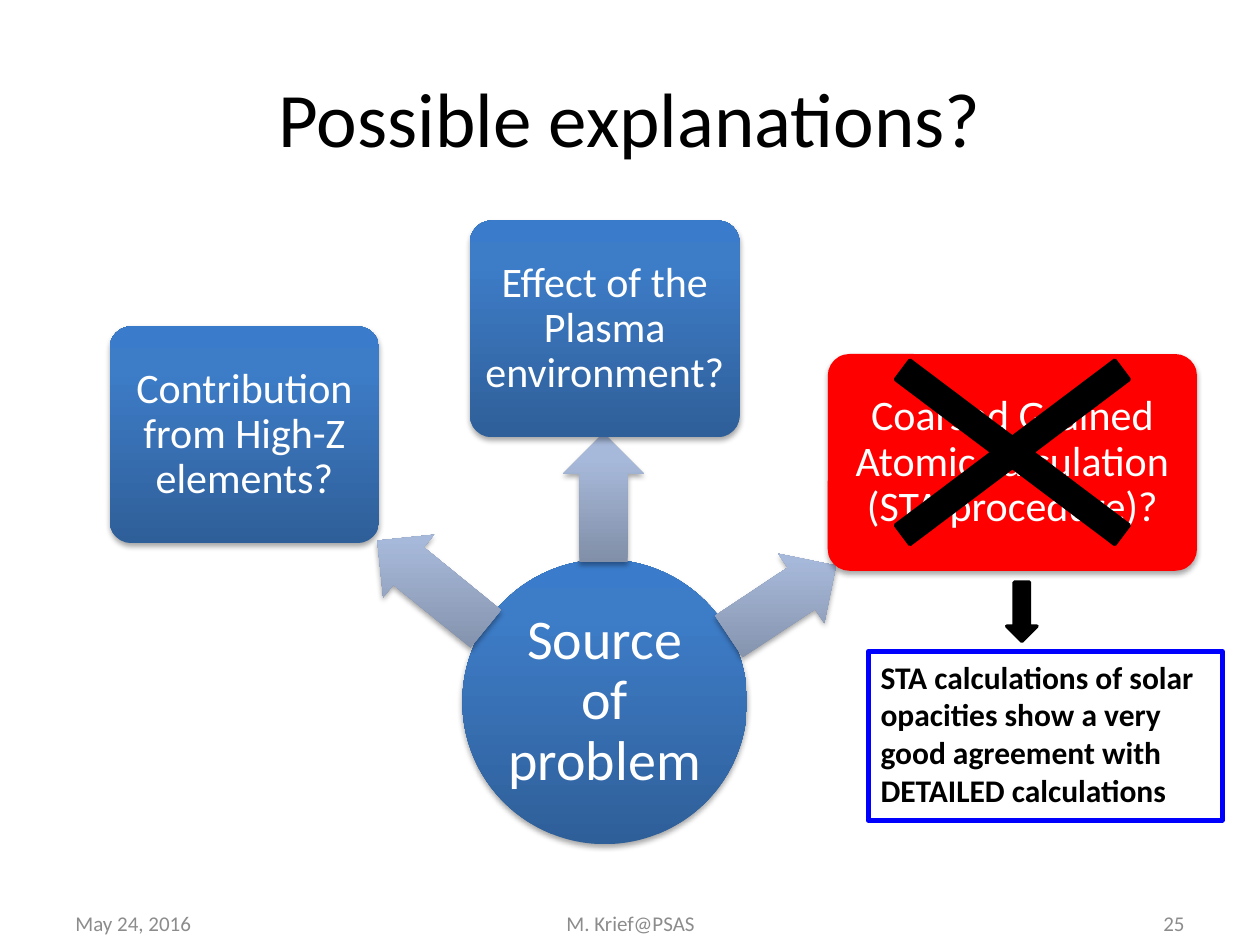
"""Build the slide that weighs three possible explanations of a problem."""
from lxml.etree import SubElement
from pptx import Presentation
from pptx.dml.color import RGBColor
from pptx.enum.shapes import MSO_SHAPE as Shape
from pptx.enum.text import MSO_ANCHOR as Anchor, PP_ALIGN as Align
from pptx.oxml import parse_xml
from pptx.oxml.ns import nsdecls, qn
from pptx.util import Inches, Pt

BLACK = RGBColor(0x00, 0x00, 0x00)
WHITE = RGBColor(0xFF, 0xFF, 0xFF)
GRAY = RGBColor(0x8C, 0x8C, 0x8C)
RED = RGBColor(0xFF, 0x00, 0x00)
BLUE = RGBColor(0x00, 0x00, 0xFF)
BLUE_STOPS = [RGBColor(0x2F, 0x5F, 0x99), RGBColor(0x3D, 0x7C, 0xC7), RGBColor(0x3A, 0x7C, 0xCB)]
ARROW_STOPS = [RGBColor(0x81, 0x8F, 0xA8), RGBColor(0xA7, 0xB9, 0xDA), RGBColor(0xA7, 0xBA, 0xDC)]

presentation = Presentation()
presentation.slide_width = Inches(10)
presentation.slide_height = Inches(7.5)
cell = presentation.slide_width / 100
slide = presentation.slides.add_slide(presentation.slide_layouts[5])


def write(shape, text, size, color, align, anchor=Anchor.MIDDLE, inset=(1, 0.5), bold=False, **spacing):
    frame = shape.text_frame
    frame.text = text
    side, edge = (int(share * cell) for share in inset)
    frame_format = {
        "word_wrap": True,
        "vertical_anchor": anchor,
        "margin_left": side,
        "margin_right": side,
        "margin_top": edge,
        "margin_bottom": edge,
    }
    for name, value in frame_format.items():
        setattr(frame, name, value)
    paragraph = frame.paragraphs[0]
    for name, value in {"alignment": align, **spacing}.items():
        setattr(paragraph, name, value)
    font = paragraph.runs[0].font
    for name, value in {"name": "Calibri", "size": Pt(size), "bold": bold}.items():
        setattr(font, name, value)
    font.color.rgb = color


def draw(kind, box, fill=None, line=None, line_width=2, shadow=False, adjustments=(), rotation=0):
    shape = slide.shapes.add_shape(kind, *(int(share * cell) for share in box))
    shape.rotation = rotation
    for index, value in enumerate(adjustments):
        shape.adjustments[index] = value
    properties = shape.element.spPr
    if fill is None:
        shape.fill.background()
    elif isinstance(fill, list):
        shape.fill.gradient()
        stops = "".join(
            f'<a:gs pos="{position}000"><a:srgbClr val="{color}"/></a:gs>'
            for position, color in zip((0, 80, 100), fill)
        )
        gradient = parse_xml(
            f'<a:gradFill {nsdecls("a")} rotWithShape="0"><a:gsLst>{stops}</a:gsLst>'
            '<a:lin ang="16200000" scaled="0"/></a:gradFill>'
        )
        properties.replace(properties.find(qn("a:gradFill")), gradient)
    else:
        shape.fill.solid()
        shape.fill.fore_color.rgb = fill
    if line is None:
        shape.line.fill.background()
    else:
        shape.line.color.rgb = line
        shape.line.width = Pt(line_width)
    shape.shadow.inherit = False
    if shadow:
        effects = properties.find(qn("a:effectLst"))
        outer = SubElement(effects, qn("a:outerShdw"), blurRad="40000", dist="23000", dir="5400000", rotWithShape="0")
        color = SubElement(outer, qn("a:srgbClr"), val=str(BLACK))
        SubElement(color, qn("a:alpha"), val="35000")
    return shape


title = slide.shapes.title
for name, share in {"left": 5, "top": 3, "width": 90, "height": 12.5}.items():
    setattr(title, name, int(share * cell))
write(title, "Possible explanations?", 44, BLACK, Align.CENTER)

circle = draw(Shape.OVAL, (36.7, 44.4, 22.6, 22.6), BLUE_STOPS, shadow=True)
write(circle, "Source of problem", 32, WHITE, Align.CENTER, inset=(0.2, 0.2), line_spacing=0.9)

explanations = [
    ("Contribution from High-Z elements?", (8.7, 25.9, 21.4, 17.2), BLUE_STOPS, (28.7, 43.2, 11.1, 6.4), 219.1),
    ("Effect of the Plasma environment?", (37.3, 17.5, 21.4, 17.2), BLUE_STOPS, (42.8, 36.3, 10.2, 6.4), 270),
    ("Coarsed Grained Atomic calculation (STA procedure)?", (65.7, 28.1, 29.3, 17.2), RED, (57, 44.4, 10.2, 6.6), 326.5),
]
for text, card_box, fill, arrow_box, rotation in explanations:
    draw(Shape.RIGHT_ARROW, arrow_box, ARROW_STOPS, shadow=True, adjustments=(0.6, 0.5), rotation=rotation)
    card = draw(Shape.ROUNDED_RECTANGLE, card_box, fill, shadow=True, adjustments=(0.1,))
    write(card, text, 24, WHITE, Align.CENTER, inset=(0.5, 0.5), line_spacing=0.9)

footers = [
    ("May 24, 2016", 5, 23.3, Align.LEFT),
    ("M. Krief@PSAS", 34.2, 31.7, Align.CENTER),
    ("25", 71.7, 23.3, Align.RIGHT),
]
for text, left, width, align in footers:
    footer = slide.shapes.add_textbox(*(int(share * cell) for share in (left, 71.3, width, 4)))
    write(footer, text, 12, GRAY, align)

conclusion = draw(Shape.RECTANGLE, (68.9, 51.7, 28.1, 13.4), line=BLUE, line_width=2.75)
write(
    conclusion,
    "STA calculations of solar opacities show a very good agreement with DETAILED calculations",
    18, BLACK, Align.LEFT, anchor=Anchor.TOP, bold=True, space_before=Pt(3.6),
)
draw(Shape.DOWN_ARROW, (79.9, 46.2, 2.4, 4.7), BLACK, BLACK)
draw(Shape.MATH_MULTIPLY, (63.6, 23.3, 33.5, 25.2), BLACK, BLACK, adjustments=(0.076,))

presentation.save("out.pptx")
